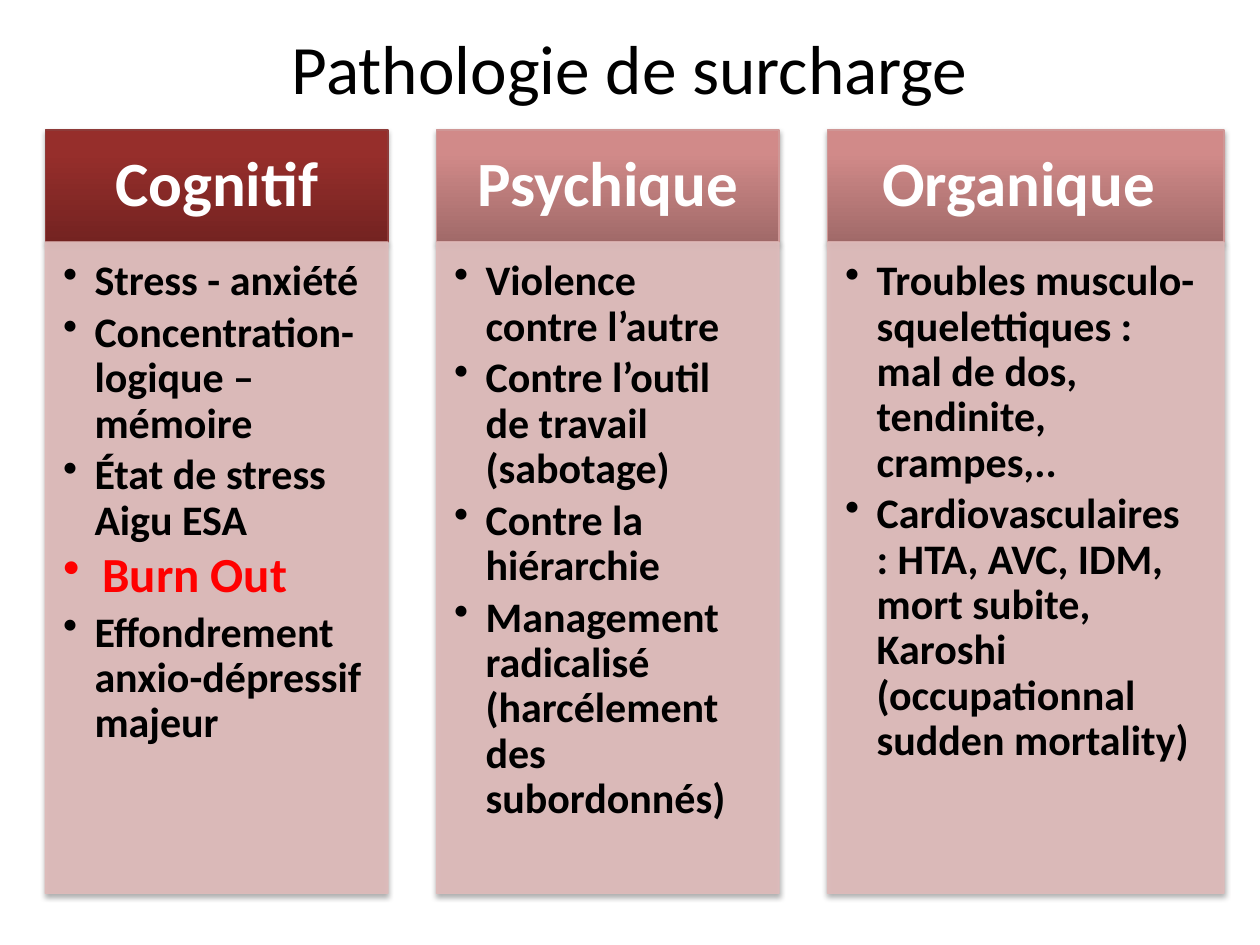
"""Build the slide on overload pathologies: three columns of header and bullets."""
from pptx import Presentation
from pptx.dml.color import RGBColor
from pptx.enum.shapes import MSO_SHAPE
from pptx.enum.text import MSO_ANCHOR, PP_ALIGN
from pptx.oxml import parse_xml
from pptx.oxml.ns import nsdecls, qn
from pptx.util import Pt

FONT = "Calibri"
BLACK = RGBColor(0x00, 0x00, 0x00)
WHITE = RGBColor(0xFF, 0xFF, 0xFF)
RED = RGBColor(0xFF, 0x00, 0x00)
PINK = RGBColor(0xDF, 0xBB, 0xBA)
DARK_LINE = RGBColor(0x8E, 0x3B, 0x39)
LIGHT_LINE = RGBColor(0xCF, 0x97, 0x96)
DARK_STOPS = [
    (0, RGBColor(0x74, 0x23, 0x21)),
    (80, RGBColor(0x96, 0x2E, 0x2B)),
    (100, RGBColor(0x99, 0x2C, 0x29)),
]
LIGHT_STOPS = [
    (0, RGBColor(0xA1, 0x6A, 0x69)),
    (80, RGBColor(0xD1, 0x8A, 0x89)),
    (100, RGBColor(0xD3, 0x89, 0x88)),
]

HEAD_TOP, HEAD_H = 74.2, 64.1
BODY_TOP, BODY_H = HEAD_TOP + HEAD_H, 372.2
LEFT, GAP = 25.9, 27.7
HIGHLIGHT = "Burn Out"

COLUMNS = [
    ("Cognitif", 195.8, DARK_STOPS, DARK_LINE, [
        "Stress - anxiété",
        "Concentration- logique – mémoire",
        "État de stress Aigu ESA",
        HIGHLIGHT,
        "Effondrement anxio-dépressif majeur",
    ]),
    ("Psychique ", 195.8, LIGHT_STOPS, LIGHT_LINE, [
        "Violence contre l’autre",
        "Contre l’outil de travail (sabotage)",
        "Contre la hiérarchie",
        "Management radicalisé (harcélement des subordonnés)",
    ]),
    ("Organique ", 226.6, LIGHT_STOPS, LIGHT_LINE, [
        "Troubles musculo-squelettiques : mal de dos, tendinite, crampes,..",
        "Cardiovasculaires : HTA, AVC, IDM, mort subite, Karoshi "
        "(occupationnal sudden mortality)",
    ]),
]


def setup_frame(tf, anchor, insets):
    """Set wrapping, anchor and left, top, right, bottom insets."""
    tf.word_wrap = True
    tf.vertical_anchor = anchor
    tf.margin_left, tf.margin_top, tf.margin_right, tf.margin_bottom = map(Pt, insets)


def write_text(p, text, *, size, color=BLACK, bold=False, align=PP_ALIGN.CENTER,
               spacing=None, after=0, indent=None):
    """Write one formatted paragraph, bulleted when an indent is given."""
    p.alignment = align
    p.line_spacing = spacing
    p.space_after = Pt(after)
    if indent:
        p.level = 1
        pPr = p._p.get_or_add_pPr()
        pPr.set("marL", str(Pt(indent)))
        pPr.set("indent", str(-Pt(indent)))
        pPr.append(parse_xml(f'<a:buChar {nsdecls("a")} char="•"/>'))
    r = p.add_run()
    r.text = text
    r.font.name, r.font.size, r.font.bold = FONT, Pt(size), bold
    r.font.color.rgb = color


def add_box(s, x, y, w, h, line):
    """Add an outlined rectangle with a soft shadow below it."""
    sp = s.shapes.add_shape(MSO_SHAPE.RECTANGLE, Pt(x), Pt(y), Pt(w), Pt(h))
    sp.line.color.rgb = line
    sp.line.width = Pt(0.75)
    sp.shadow.inherit = False
    sp._element.spPr.find(qn("a:effectLst")).append(parse_xml(
        f'<a:outerShdw {nsdecls("a")} blurRad="{Pt(3.1)}" dist="{Pt(1.8)}" '
        'dir="5400000" rotWithShape="0"><a:srgbClr val="000000">'
        '<a:alpha val="35000"/></a:srgbClr></a:outerShdw>'))
    return sp


def fill_gradient(sp, stops):
    """Fill a shape with a gradient rising from its bottom edge."""
    sp.fill.gradient()
    sp.fill.gradient_angle = 90
    grad = sp._element.spPr.find(qn("a:gradFill"))
    items = "".join(f'<a:gs pos="{pos * 1000}"><a:srgbClr val="{color}"/></a:gs>'
                    for pos, color in stops)
    grad.replace(grad.find(qn("a:gsLst")),
                 parse_xml(f'<a:gsLst {nsdecls("a")}>{items}</a:gsLst>'))


def add_header(s, x, w, text, stops, line):
    """Add a column header."""
    sp = add_box(s, x, HEAD_TOP, w, HEAD_H, line)
    fill_gradient(sp, stops)
    setup_frame(sp.text_frame, MSO_ANCHOR.MIDDLE, (20.2, 11.5, 20.2, 11.5))
    write_text(sp.text_frame.paragraphs[0], text, size=36, color=WHITE, bold=True,
               spacing=0.9)


def add_body(s, x, w, items):
    """Add the translucent panel with its bullets."""
    sp = add_box(s, x, BODY_TOP, w, BODY_H, PINK)
    sp.fill.solid()
    sp.fill.fore_color.rgb = PINK
    for clr in sp._element.spPr.iter(qn("a:srgbClr")):
        if clr.get("val") == str(PINK):
            clr.append(parse_xml(f'<a:alpha {nsdecls("a")} val="90000"/>'))
    tf = sp.text_frame
    setup_frame(tf, MSO_ANCHOR.TOP, (10.1, 10.1, 13.5, 15.1))
    for i, item in enumerate(items):
        p = tf.add_paragraph() if i else tf.paragraphs[0]
        size, color, indent = (28, RED, 22.5) if item == HIGHLIGHT else (24, BLACK, 18)
        write_text(p, item, size=size, color=color, bold=True, align=PP_ALIGN.LEFT,
                   spacing=0.9, after=round(0.15 * size, 1), indent=indent)


def add_title(s, text):
    """Add the slide title."""
    tf = s.shapes.add_textbox(Pt(36), Pt(21.6), Pt(648), Pt(33.1)).text_frame
    setup_frame(tf, MSO_ANCHOR.MIDDLE, (7.2, 3.6, 7.2, 3.6))
    write_text(tf.paragraphs[0], text, size=39.6)


def main():
    """Build and save the presentation."""
    prs = Presentation()
    prs.slide_width, prs.slide_height = Pt(720), Pt(540)
    s = prs.slides.add_slide(prs.slide_layouts[6])
    add_title(s, "Pathologie de surcharge")
    x = LEFT
    for head, w, stops, line, items in COLUMNS:
        add_header(s, x, w, head, stops, line)
        add_body(s, x, w, items)
        x += w + GAP
    prs.save("out.pptx")


if __name__ == "__main__":
    main()
